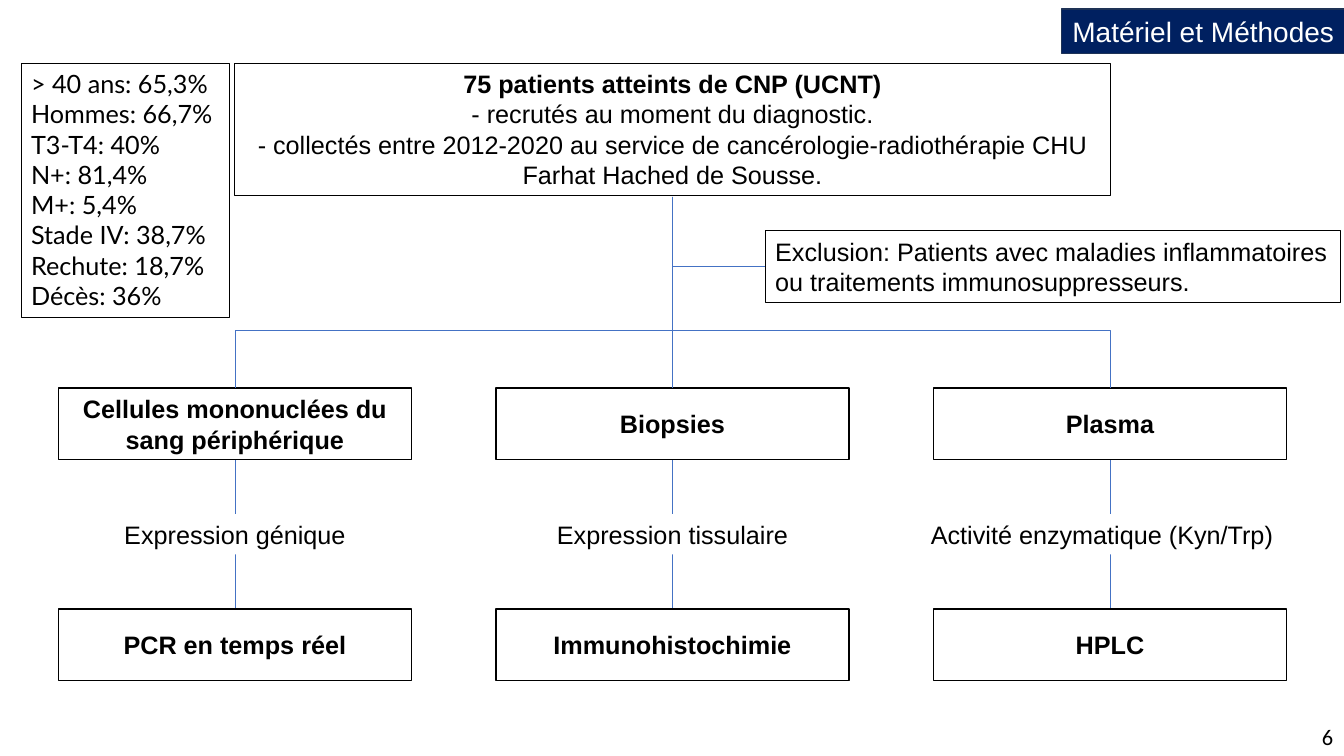
from pptx import Presentation
from pptx.dml.color import RGBColor
from pptx.enum.shapes import MSO_CONNECTOR, MSO_SHAPE
from pptx.enum.text import MSO_ANCHOR, MSO_AUTO_SIZE, PP_ALIGN
from pptx.oxml.ns import qn
from pptx.util import Inches, Pt
from lxml import etree

RECT = MSO_SHAPE.RECTANGLE
STRAIGHT, ELBOW = MSO_CONNECTOR.STRAIGHT, MSO_CONNECTOR.ELBOW
TOP, MIDDLE = MSO_ANCHOR.TOP, MSO_ANCHOR.MIDDLE
LEFT, CENTER, RIGHT = PP_ALIGN.LEFT, PP_ALIGN.CENTER, PP_ALIGN.RIGHT
GROW = MSO_AUTO_SIZE.SHAPE_TO_FIT_TEXT


class Theme:
    ink = RGBColor(0, 0, 0)
    white = RGBColor(255, 255, 255)
    navy = RGBColor(0x00, 0x20, 0x60)
    edge = RGBColor(0x1E, 0x32, 0x56)
    blue = RGBColor(0x44, 0x72, 0xC4)
    title, body, page = Pt(20), Pt(18), Pt(16)
    sans, stats, number = "Arial", "Lato", "Calibri"
    thin, frame, thick = Pt(0.5), Pt(0.75), Pt(1)


BODY = {"size": Theme.body, "name": Theme.sans, "bold": False}
BOLD = {**BODY, "bold": True}
STATS = {**BODY, "name": Theme.stats}


# Text and shape helpers
def write(frame, lines, fonts, color=Theme.ink, align=CENTER, anchor=TOP):
    """Write one paragraph per line, each with its own font format."""
    frame.word_wrap = True
    frame.vertical_anchor = anchor
    for i, (line, look) in enumerate(zip(lines, fonts)):
        para = frame.paragraphs[0] if i == 0 else frame.add_paragraph()
        para.alignment = align
        run = para.add_run()
        run.text = line
        run.font.color.rgb = color
        for key, value in look.items():
            setattr(run.font, key, value)


def panel(slide, box, fill=None, line=None, width=Theme.frame):
    shape = slide.shapes.add_shape(RECT, *map(Inches, box))
    shape.shadow.inherit = False
    if fill is None:
        shape.fill.background()
    else:
        shape.fill.solid()
        shape.fill.fore_color.rgb = fill
    if line is None:
        shape.line.fill.background()
    else:
        shape.line.color.rgb = line
        shape.line.width = width
    return shape


def link(slide, start, end, kind=STRAIGHT):
    line = slide.shapes.add_connector(kind, *map(Inches, (*start, *end)))
    line.line.color.rgb = Theme.blue
    line.line.width = Theme.thin
    etree.SubElement(line._element.spPr, qn("a:effectLst"))
    return line


def branch(slide, start, end, bend=0.7):
    """Elbow that leaves downwards: a quarter-turned connector."""
    (x1, y1), (x2, y2) = start, end
    mid_x, mid_y = (x1 + x2) / 2, (y1 + y2) / 2
    half_w, half_h = (y2 - y1) / 2, abs(x2 - x1) / 2
    side = 1 if x2 < x1 else -1
    line = link(slide, (mid_x - side * half_w, mid_y - half_h),
                (mid_x + side * half_w, mid_y + half_h), ELBOW)
    props = line._element.spPr
    turn = 90 if side == 1 else 270
    props.find(qn("a:xfrm")).set("rot", str(turn * 60000))
    geom = props.find(qn("a:prstGeom"))
    guides = geom.find(qn("a:avLst"))
    if guides is None:
        guides = etree.SubElement(geom, qn("a:avLst"))
    etree.SubElement(guides, qn("a:gd"), name="adj1",
                     fmla=f"val {round(bend * 100000)}")


# Regions of the slide
def header(slide, box):
    tag = panel(slide, box, Theme.navy, Theme.edge, Theme.thick)
    write(tag.text_frame, ["Matériel et Méthodes"],
          [{**BODY, "size": Theme.title}], Theme.white, anchor=MIDDLE)


def note(slide, box, lines, fonts, align=LEFT):
    frame = panel(slide, box, line=Theme.ink).text_frame
    write(frame, lines, fonts, align=align)
    frame.auto_size = GROW


def column(slide, box, sample, target, method, label_w, shift):
    """Sample box, target label and method box, joined by a line."""
    x, y, w, h = box
    cell_h = 0.71
    mid = x + w / 2
    link(slide, (mid, y + cell_h), (mid, y + h - cell_h))
    for top, text in ((y, sample), (y + h - cell_h, method)):
        cell = panel(slide, (x, top, w, cell_h), line=Theme.ink,
                     width=Theme.thick)
        write(cell.text_frame, [text], [BOLD], anchor=MIDDLE)
    place = (mid + shift - label_w / 2, y + 1.25, label_w, 0.4)
    label = panel(slide, place, Theme.white)
    write(label.text_frame, [target], [BODY])
    label.text_frame.auto_size = GROW


def number(slide, box):
    field = slide.shapes.add_textbox(*map(Inches, box))
    write(field.text_frame, ["6"],
          [{"size": Theme.page, "name": Theme.number}],
          align=RIGHT, anchor=MIDDLE)


def main():
    deck = Presentation()
    deck.slide_width, deck.slide_height = Inches(13.33), Inches(7.5)
    slide = deck.slides.add_slide(deck.slide_layouts[6])

    number(slide, (12.77, 7.13, 0.55, 0.36))
    header(slide, (10.53, 0.09, 2.81, 0.44))

    # Cohort, exclusion and patient figures
    note(slide, (2.33, 0.63, 8.68, 1.31), [
        "75 patients atteints de CNP (UCNT)",
        "- recrutés au moment du diagnostic.",
        "- collectés entre 2012-2020 au service de cancérologie-radiothérapie "
        "CHU Farhat Hached de Sousse.",
    ], [BOLD, BODY, BODY], CENTER)
    note(slide, (7.59, 2.29, 5.71, 0.71), [
        "Exclusion: Patients avec maladies inflammatoires ou traitements "
        "immunosuppresseurs."], [BODY])
    figures = ["> 40 ans: 65,3%", "Hommes: 66,7%", "T3-T4: 40%", "N+: 81,4%",
               "M+: 5,4%", "Stade IV: 38,7%", "Rechute: 18,7%", "Décès: 36%"]
    note(slide, (0.21, 0.63, 2.07, 2.52), figures, [STATS] * len(figures))

    # Three analysis columns
    left, top, wide, step = 0.58, 3.85, 3.5, 4.34
    columns = [
        ("Cellules mononuclées du sang périphérique", "Expression génique",
         "PCR en temps réel", 2.52, 0),
        ("Biopsies", "Expression tissulaire", "Immunohistochimie", 2.52, 0),
        ("Plasma", "Activité enzymatique (Kyn/Trp)", "HPLC", 3.67, -0.08),
    ]
    for i, parts in enumerate(columns):
        column(slide, (left + i * step, top, wide, 2.9), *parts)

    # Tree from the cohort to the columns
    mid = left + step + wide / 2
    root = (mid, 1.95)
    link(slide, root, (mid, top))
    for side in (-1, 1):
        branch(slide, root, (mid + side * step, top))
    link(slide, (mid, 2.64), (7.59, 2.64))

    deck.save("out.pptx")


if __name__ == "__main__":
    main()
